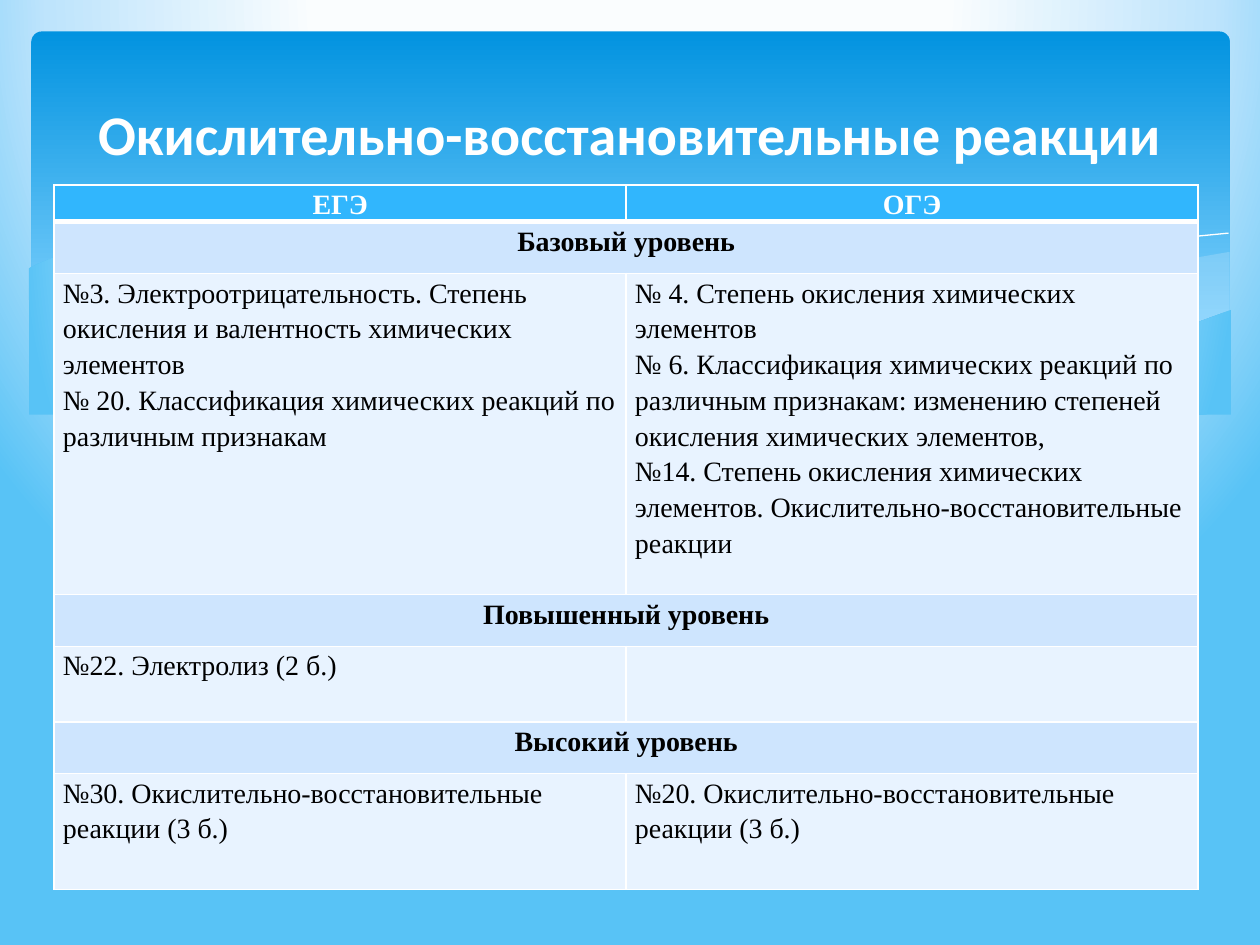
from pptx import Presentation
from pptx.dml.color import RGBColor
from pptx.enum.shapes import MSO_SHAPE
from pptx.enum.text import MSO_ANCHOR, PP_ALIGN
from pptx.oxml import parse_xml
from pptx.oxml.ns import nsdecls, qn
from pptx.util import Pt

ROUND = MSO_SHAPE.ROUNDED_RECTANGLE
MIDDLE = MSO_ANCHOR.MIDDLE
LEFT, CENTER = PP_ALIGN.LEFT, PP_ALIGN.CENTER
SCALE = 9144

WHITE, BLACK = "FFFFFF", "000000"
HEAD, BAND, PALE, MIST = "31B6FD", "CEE5FE", "E8F3FF", "C6E7FC"
GLOW = [(40, "FAFDFE"), (74, "BEE4FC"), (100, "58C3F6")]
SKY = [(0, "0293E0"), (90, "83D3FE")]
CIRCLE = ('<a:path path="circle"><a:fillToRect l="20000" t="-40000" '
          'r="20000" b="140000"/></a:path>')
DOWN = '<a:lin ang="5400000" scaled="0"/>'

RIGHT_MIST = [
    (975, 200), (935, 207), (891, 216), (832, 230), (779, 242), (729, 253),
    (661, 265), (705, 271), (757, 276), (803, 278), (854, 276), (897, 270),
    (935, 262), (975, 247), (976, 247), (976, 200)]
MID_MIST = [
    (893, 273), (837, 265), (775, 254), (706, 240), (629, 222), (569, 208),
    (514, 198), (465, 191), (399, 186), (344, 186), (286, 191), (342, 199),
    (404, 211), (449, 222), (530, 240), (601, 255), (665, 266), (722, 274),
    (785, 278), (838, 278), (893, 273)]
LONG_LINE = [
    (309, 195), (344, 190), (387, 187), (433, 187), (489, 190), (556, 197),
    (636, 208), (695, 219), (760, 233), (831, 251), (907, 272)]
SHORT_LINE = [
    (613, 257), (672, 241), (748, 223), (806, 210), (866, 199), (924, 190),
    (975, 185)]
WAVE = [
    (977, 246), (950, 256), (920, 265), (887, 271), (837, 276), (793, 276),
    (744, 274), (688, 268), (626, 258), (555, 245), (503, 233), (447, 220),
    (391, 207), (340, 197), (292, 190), (230, 185), (177, 184), (132, 186),
    (95, 191), (67, 197), (46, 203), (29, 210), (23, 213), (23, 329),
    (977, 329)]

ROWS = [
    (29, ["ЕГЭ", "ОГЭ"]),
    (41, ["Базовый уровень"]),
    (255, ["№3. Электроотрицательность. Степень\n"
           "окисления и валентность химических элементов\n"
           "№ 20. Классификация химических реакций по различным признакам",
           "№ 4. Степень окисления химических элементов\n"
           "№ 6. Классификация химических реакций по различным признакам: "
           "изменению степеней окисления химических элементов,\n"
           "№14. Степень окисления химических элементов. "
           "Окислительно-восстановительные реакции"]),
    (41, ["Повышенный уровень"]),
    (60, ["№22. Электролиз (2 б.)", ""]),
    (41, ["Высокий уровень"]),
    (92, ["№30. Окислительно-восстановительные реакции (3 б.)",
          "№20. Окислительно-восстановительные реакции (3 б.)"]),
]


def px(n):
    return n * SCALE


def rgb(code):
    return RGBColor.from_string(code)


def blend(item, fill, stops, way):
    fill.gradient()
    old = next(item.element.iter(qn("a:gradFill")))
    marks = "".join(f'<a:gs pos="{pos * 1000}"><a:srgbClr val="{code}"/></a:gs>'
                    for pos, code in stops)
    old.getparent().replace(old, parse_xml(
        f'<a:gradFill {nsdecls("a")} rotWithShape="1">'
        f'<a:gsLst>{marks}</a:gsLst>{way}</a:gradFill>'))


class Page:
    def __init__(self, slide, face="Times New Roman", size=16):
        self.slide, self.face, self.size = slide, face, size
        blend(slide, slide.background.fill, GLOW, CIRCLE)

    def label(self, frame, text, code, bold, align, face=None, size=None,
              lead=None):
        frame.text = text
        for para in frame.paragraphs:
            para.alignment, para.line_spacing = align, lead
            font = para.font
            font.name, font.size = face or self.face, Pt(size or self.size)
            font.bold, font.color.rgb = bold, rgb(code)

    def panel(self, x, y, w, h, curve):
        shape = self.slide.shapes.add_shape(ROUND, px(x), px(y), px(w), px(h))
        shape.adjustments[0] = curve
        shape.shadow.inherit = False
        shape.line.fill.background()
        blend(shape, shape.fill, SKY, DOWN)

    def trace(self, spots, close):
        pen = self.slide.shapes.build_freeform(*spots[0], scale=SCALE)
        pen.add_line_segments(spots[1:], close=close)
        shape = pen.convert_to_shape()
        shape.shadow.inherit = False
        return shape

    def mist(self, spots, alpha):
        shape = self.trace(spots, True)
        shape.line.fill.background()
        shape.fill.solid()
        shape.fill.fore_color.rgb = rgb(MIST)
        tint = next(shape.element.spPr.iter(qn("a:srgbClr")))
        tint.append(parse_xml(
            f'<a:alpha {nsdecls("a")} val="{alpha * 1000}"/>'))

    def wave(self, spots):
        shape = self.trace(spots, True)
        shape.line.fill.background()
        blend(shape, shape.fill, GLOW, CIRCLE)

    def curve(self, spots):
        shape = self.trace(spots, False)
        shape.fill.background()
        shape.line.color.rgb = rgb(WHITE)
        shape.line.width = 0

    def title(self, x, y, w, h, text):
        box = self.slide.shapes.add_textbox(px(x), px(y), px(w), px(h))
        frame = box.text_frame
        frame.word_wrap, frame.vertical_anchor = True, MIDDLE
        self.label(frame, text, WHITE, True, CENTER, "Calibri", 32)

    def edge(self, cell, top, base):
        props = cell._tc.get_or_add_tcPr()
        for side, width in (("L", 1), ("R", 1), ("T", top), ("B", base)):
            props.append(parse_xml(
                f'<a:ln{side} {nsdecls("a")} w="{Pt(width)}"><a:solidFill>'
                f'<a:srgbClr val="{WHITE}"/></a:solidFill></a:ln{side}>'))

    def table(self, x, y, w, rows):
        high = sum(tall for tall, _ in rows)
        grid = self.slide.shapes.add_table(
            len(rows), 2, px(x), px(y), px(w), px(high)).table
        grid.first_row = grid.horz_banding = False
        for r, (tall, texts) in enumerate(rows):
            grid.rows[r].height = px(tall)
            wide = len(texts) == 1
            bold = r == 0 or wide
            tone = HEAD if r == 0 else BAND if wide else PALE
            for c in range(2):
                cell = grid.cell(r, c)
                self.edge(cell, 3 if r == 1 else 1, 3 if r == 0 else 1)
                cell.fill.solid()
                cell.fill.fore_color.rgb = rgb(tone)
                cell.margin_left = cell.margin_right = px(7)
                cell.margin_top = cell.margin_bottom = 0
            if wide:
                grid.cell(r, 0).merge(grid.cell(r, 1))
            for c, text in enumerate(texts):
                self.label(grid.cell(r, c).text_frame, text,
                           BLACK if r else WHITE, bold,
                           CENTER if bold else LEFT, lead=1.15)


def main():
    deck = Presentation()
    deck.slide_width, deck.slide_height = px(1000), px(750)
    page = Page(deck.slides.add_slide(deck.slide_layouts[6]))
    page.panel(25, 25, 951, 270, 0.03)
    page.mist(RIGHT_MIST, 29)
    page.mist(MID_MIST, 40)
    page.curve(LONG_LINE)
    page.curve(SHORT_LINE)
    page.wave(WAVE)
    page.table(43, 147, 908, ROWS)
    page.title(50, 37, 900, 137, "Окислительно-восстановительные реакции")
    deck.save("out.pptx")


if __name__ == "__main__":
    main()
